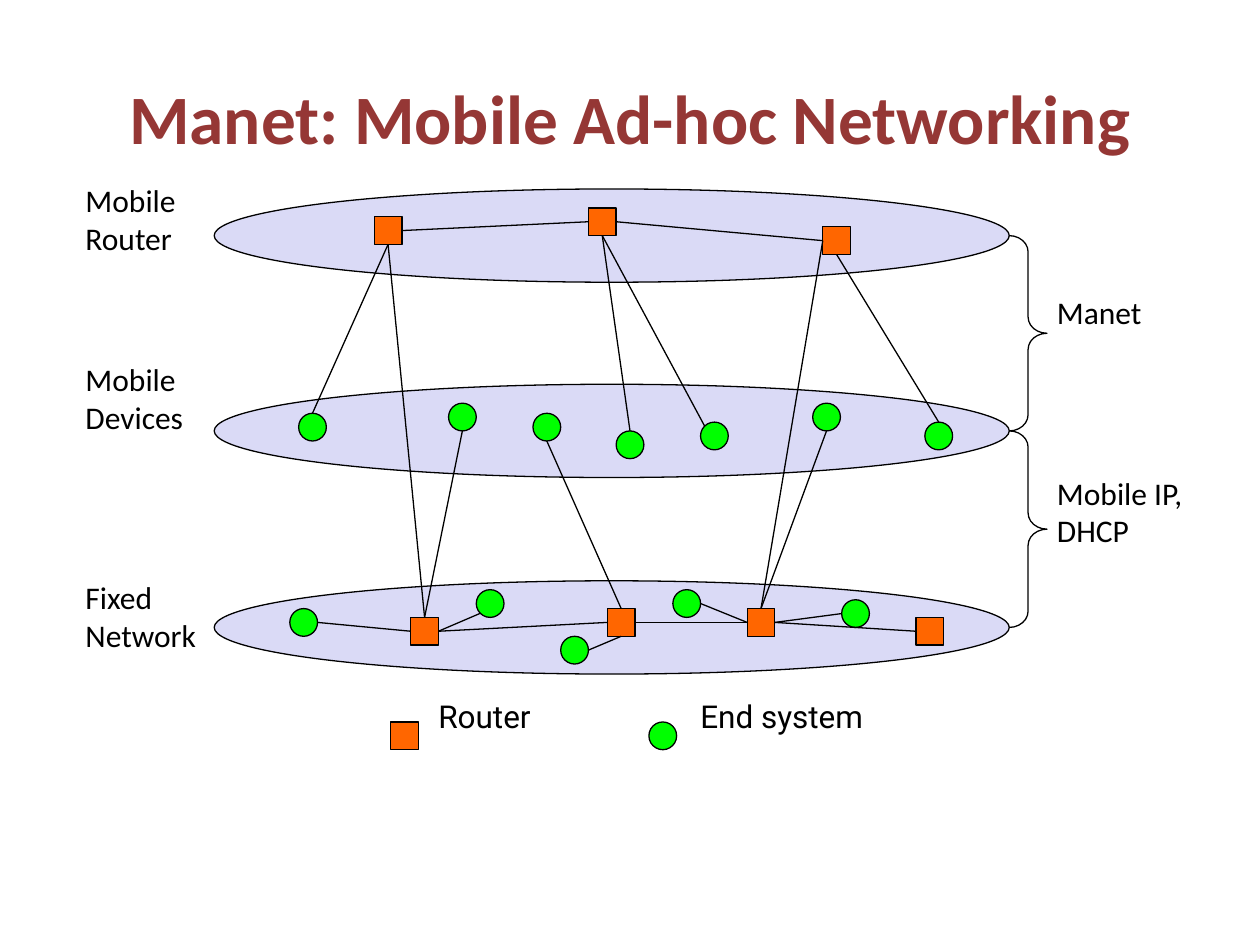
from pptx import Presentation
from pptx.dml.color import RGBColor
from pptx.enum.shapes import MSO_CONNECTOR, MSO_SHAPE
from pptx.enum.text import MSO_ANCHOR, MSO_AUTO_SIZE, PP_ALIGN
from pptx.oxml.ns import qn
from pptx.util import Inches, Pt
from lxml import etree

OVAL, RECT, BRACE = MSO_SHAPE.OVAL, MSO_SHAPE.RECTANGLE, MSO_SHAPE.RIGHT_BRACE
LINE = MSO_CONNECTOR.STRAIGHT
MIDDLE, CENTER = MSO_ANCHOR.MIDDLE, PP_ALIGN.CENTER
FIT, FIXED = MSO_AUTO_SIZE.SHAPE_TO_FIT_TEXT, MSO_AUTO_SIZE.NONE

THEME = {
    "layer": "DADAF6", "router": "FF6600", "end": "00FF00", "ink": "000000",
    "line": 0.75,
    "title": {"name": "Calibri", "size": Pt(39.6), "bold": True, "color": "953735"},
    "label": {"name": "Calibri", "size": Pt(18), "color": "000000"},
    "key": {"name": "Roboto", "size": Pt(18), "color": "000000"},
}

TITLE = "Manet: Mobile Ad-hoc Networking"
LAYER_TOPS = [4.61, 3.05, 1.5]
LAYER_LEFT, LAYER_W, LAYER_H = 1.7, 6.31, 0.74
BRACE_W, NODE = 0.3, 0.22

# text lines, left, top, width, style
LABELS = [
    (["Fixed", "Network"], 0.58, 4.54, 1.12, "label"),
    (["Mobile", "Devices"], 0.58, 2.81, 1.09, "label"),
    (["Mobile", "Router"], 0.58, 1.39, 0.95, "label"),
    (["Manet"], 8.29, 2.28, 0.9, "label"),
    (["Mobile IP,", "DHCP"], 8.29, 3.71, 1.38, "label"),
    (["Router"], 3.38, 5.48, 0.95, "key"),
    (["End system"], 5.46, 5.48, 1.5, "key"),
]

# left and top of each node: m = mobile router, d = device,
# f = fixed router, h = fixed host
ROUTERS = {
    "m1": (2.97, 1.72), "m2": (4.67, 1.65), "m3": (6.53, 1.8),
    "f1": (3.26, 4.9), "f2": (4.82, 4.83), "f3": (5.93, 4.83), "f4": (7.27, 4.9),
    "key router": (3.1, 5.73),
}
ENDS = {
    "d1": (2.37, 3.28), "d2": (3.56, 3.2), "d3": (4.23, 3.28), "d4": (4.89, 3.42),
    "d5": (5.56, 3.35), "d6": (6.45, 3.2), "d7": (7.34, 3.35),
    "h1": (2.3, 4.83), "h2": (3.78, 4.68), "h3": (4.45, 5.05),
    "h4": (5.34, 4.68), "h5": (6.68, 4.76),
    "key end": (5.15, 5.73),
}

# share of the node's width and height at each point where a link can meet it
SIDES = {
    "top": (0.5, 0), "bottom": (0.5, 1), "left": (0, 0.5), "right": (1, 0.5),
    "top left": (0.15, 0.15), "bottom left": (0.15, 0.85),
}
LINKS = [
    ("d1", "top", "m1", "bottom"), ("m1", "right", "m2", "left"),
    ("m2", "right", "m3", "left"), ("f1", "top", "d2", "bottom"),
    ("h1", "right", "f1", "left"), ("d4", "top", "m2", "bottom"),
    ("d5", "top left", "m2", "bottom"), ("d6", "bottom", "f3", "top"),
    ("f1", "top", "m1", "bottom"), ("f2", "top", "d3", "bottom"),
    ("d7", "top", "m3", "bottom"), ("f1", "right", "h2", "bottom left"),
    ("f1", "right", "f2", "left"), ("h3", "right", "f2", "bottom"),
    ("f3", "left", "f2", "right"), ("h4", "right", "f3", "left"),
    ("f3", "right", "h5", "left"), ("f3", "right", "f4", "left"),
    ("f3", "top", "m3", "left"),
]


def ink(line):
    line.color.rgb = RGBColor.from_string(THEME["ink"])
    line.width = Pt(THEME["line"])


def style(font, form):
    for key, value in form.items():
        if key == "color":
            font.color.rgb = RGBColor.from_string(value)
        else:
            setattr(font, key, value)


def draw(slide, kind, box, fill=None):
    shape = slide.shapes.add_shape(kind, *map(Inches, box))
    shape.shadow.inherit = False
    if fill:
        shape.fill.solid()
        shape.fill.fore_color.rgb = RGBColor.from_string(THEME[fill])
    else:
        shape.fill.background()
    ink(shape.line)
    return shape


def write(slide, lines, left, top, width, look):
    height = 0.1 + 0.3 * len(lines)
    frame = slide.shapes.add_textbox(*map(Inches, (left, top, width, height))).text_frame
    frame.word_wrap = False
    frame.auto_size = FIT
    frame.text = "\n".join(lines)
    for para in frame.paragraphs:
        style(para.runs[0].font, THEME[look])


def link(slide, start, end):
    wire = slide.shapes.add_connector(LINE, *map(Inches, start + end))
    ink(wire.line)
    etree.SubElement(wire._element.spPr, qn("a:effectLst"))


def head(slide):
    title = slide.shapes.title
    box = {"left": 0.5, "top": 0.3, "width": 9, "height": 1.25}
    for key, value in box.items():
        setattr(title, key, Inches(value))
    frame = title.text_frame
    frame.text = TITLE
    frame.vertical_anchor = MIDDLE
    frame.auto_size = FIXED
    para = frame.paragraphs[0]
    para.alignment = CENTER
    style(para.runs[0].font, THEME["title"])


def main():
    deck = Presentation()
    deck.slide_width, deck.slide_height = Inches(10), Inches(7.5)
    slide = deck.slides.add_slide(deck.slide_layouts[5])
    head(slide)

    for top in LAYER_TOPS:
        draw(slide, OVAL, (LAYER_LEFT, top, LAYER_W, LAYER_H), "layer")

    # each brace spans the middles of two neighbouring layers
    for low, high in zip(LAYER_TOPS, LAYER_TOPS[1:]):
        box = (LAYER_LEFT + LAYER_W, high + LAYER_H / 2, BRACE_W, low - high)
        draw(slide, BRACE, box).adjustments[0] = 0.43

    for kind, nodes, fill in ((RECT, ROUTERS, "router"), (OVAL, ENDS, "end")):
        for left, top in nodes.values():
            draw(slide, kind, (left, top, NODE, NODE), fill)

    spots = {**ROUTERS, **ENDS}

    def point(name, side):
        return tuple(at + NODE * part for at, part in zip(spots[name], SIDES[side]))

    for first, out, last, into in LINKS:
        link(slide, point(first, out), point(last, into))

    for label in LABELS:
        write(slide, *label)

    deck.save("out.pptx")


if __name__ == "__main__":
    main()
